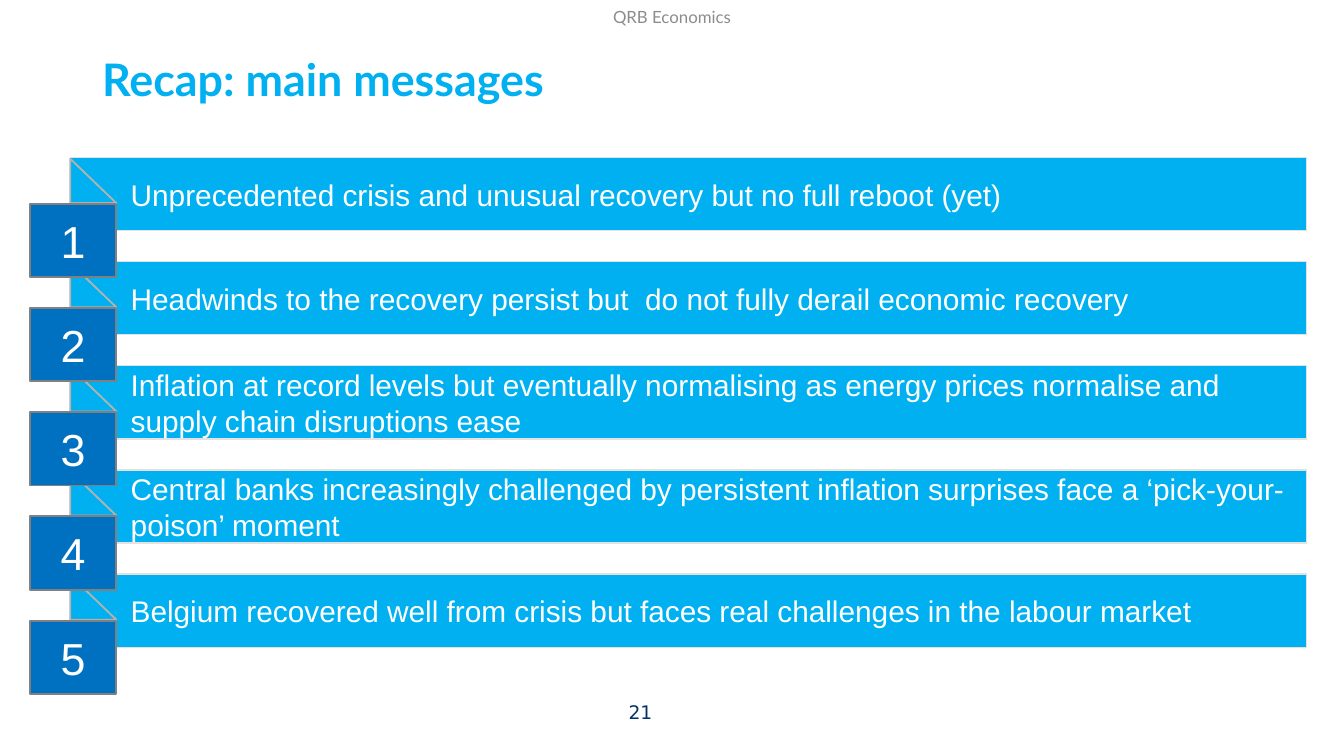
"""Build the recap slide with five numbered message bands."""
from typing import NamedTuple

from pptx import Presentation
from pptx.dml.color import RGBColor
from pptx.enum.shapes import MSO_SHAPE
from pptx.enum.text import MSO_ANCHOR, MSO_AUTO_SIZE, PP_ALIGN
from pptx.util import Inches, Pt

SKY = RGBColor(0x00, 0xB0, 0xF0)
BLUE = RGBColor(0x00, 0x70, 0xC0)
NAVY = RGBColor(0x00, 0x33, 0x66)
WHITE = RGBColor(0xFF, 0xFF, 0xFF)
PALE = RGBColor(0xE2, 0xE2, 0xE2)
SILVER = RGBColor(0xB2, 0xB2, 0xB2)
GREY = RGBColor(0x80, 0x80, 0x80)
ASH = RGBColor(0x8C, 0x8C, 0x8C)

COLS, ROWS = 100, 56.25
UNIT = Inches(10) / COLS
TOP, STEP = 11.72, 7.75


class Box(NamedTuple):
    """A place on the grid, in columns and rows."""
    left: float
    top: float
    width: float
    height: float

    def place(self) -> list[int]:
        """Return the place in slide units."""
        return [round(value * UNIT) for value in self]


class Font(NamedTuple):
    """The look of a line of text."""
    name: str
    size: float
    color: RGBColor
    bold: bool = False


class Paint(NamedTuple):
    """The fill and outline of a shape."""
    fill: RGBColor
    line: RGBColor
    width: float


BODY = Font("Arial", 16, WHITE)
DIGIT = Font("Arial", 24, WHITE)
BAND = Paint(SKY, PALE, 0.75)
FOLD = Paint(SKY, SILVER, 1)
BADGE = Paint(BLUE, GREY, 1)

MESSAGES = (
    "Unprecedented crisis and unusual recovery but no full reboot (yet)",
    "Headwinds to the recovery persist but  do not fully derail economic recovery",
    "Inflation at record levels but eventually normalising as energy prices "
    "normalise and supply chain disruptions ease",
    "Central banks increasingly challenged by persistent inflation surprises "
    "face a ‘pick-your-poison’ moment",
    "Belgium recovered well from crisis but faces real challenges in the labour market",
)


def write(shape, text: str, font: Font, align=PP_ALIGN.CENTER, wrap=False,
          anchor=MSO_ANCHOR.MIDDLE, inset=(1, 0.5, 1, 0.5), after=0, lines=1.0) -> None:
    """Set and format the text of a shape."""
    frame = shape.text_frame
    frame.text = text
    frame.auto_size = MSO_AUTO_SIZE.NONE
    frame.word_wrap = wrap
    frame.vertical_anchor = anchor
    (frame.margin_left, frame.margin_top,
     frame.margin_right, frame.margin_bottom) = [round(side * UNIT) for side in inset]
    para = frame.paragraphs[0]
    para.alignment = align
    para.space_before = Pt(0)
    para.space_after = Pt(after)
    para.line_spacing = lines
    face = para.runs[0].font
    face.name, face.size, face.bold = font.name, Pt(font.size), font.bold
    face.color.rgb = font.color


def draw(slide, kind: MSO_SHAPE, box: Box, paint: Paint):
    """Add a flat shape."""
    shape = slide.shapes.add_shape(kind, *box.place())
    shape.shadow.inherit = False
    shape.fill.solid()
    shape.fill.fore_color.rgb = paint.fill
    shape.line.color.rgb = paint.line
    shape.line.width = Pt(paint.width)
    return shape


def message(slide, index: int, text: str) -> None:
    """Add a band with its fold and numbered badge."""
    top = TOP + index * STEP
    band = draw(slide, MSO_SHAPE.RECTANGLE, Box(5.23, top, 92, 5.45), BAND)
    write(band, text, BODY, PP_ALIGN.LEFT, True, inset=(4.5, 1, 1, 1), after=12)
    draw(slide, MSO_SHAPE.RIGHT_TRIANGLE, Box(5.23, top + 0.1, 3.43, 3.3), FOLD)
    badge = draw(slide, MSO_SHAPE.RECTANGLE, Box(2.23, top + 3.46, 6.43, 5.45), BADGE)
    write(badge, str(index + 1), DIGIT)


def main() -> None:
    """Build and save the slide."""
    deck = Presentation()
    deck.slide_width = round(COLS * UNIT)
    deck.slide_height = round(ROWS * UNIT)
    slide = deck.slides.add_slide(deck.slide_layouts.get_by_name("Title Only"))

    for index, text in reversed(list(enumerate(MESSAGES))):
        message(slide, index, text)

    title = slide.shapes.title
    title.left, title.top, title.width, title.height = Box(7.6, 4.3, 73.9, 6.9).place()
    write(title, "Recap: main messages", Font("Lato", 24, SKY, True), PP_ALIGN.LEFT,
          True, MSO_ANCHOR.TOP, (0, 0, 0, 0), lines=0.9)

    head = slide.shapes.add_textbox(*Box(47.1, 0, 5.8, 2.5).place())
    write(head, "QRB Economics", Font("Lato", 9, ASH), after=6)
    page = slide.shapes.add_textbox(*Box(36, 51.6, 23.3, 3).place())
    write(page, "21", Font("DejaVu Sans", 10, NAVY), inset=(0, 0, 0, 0), lines=0.9)

    deck.save("out.pptx")


if __name__ == "__main__":
    main()
